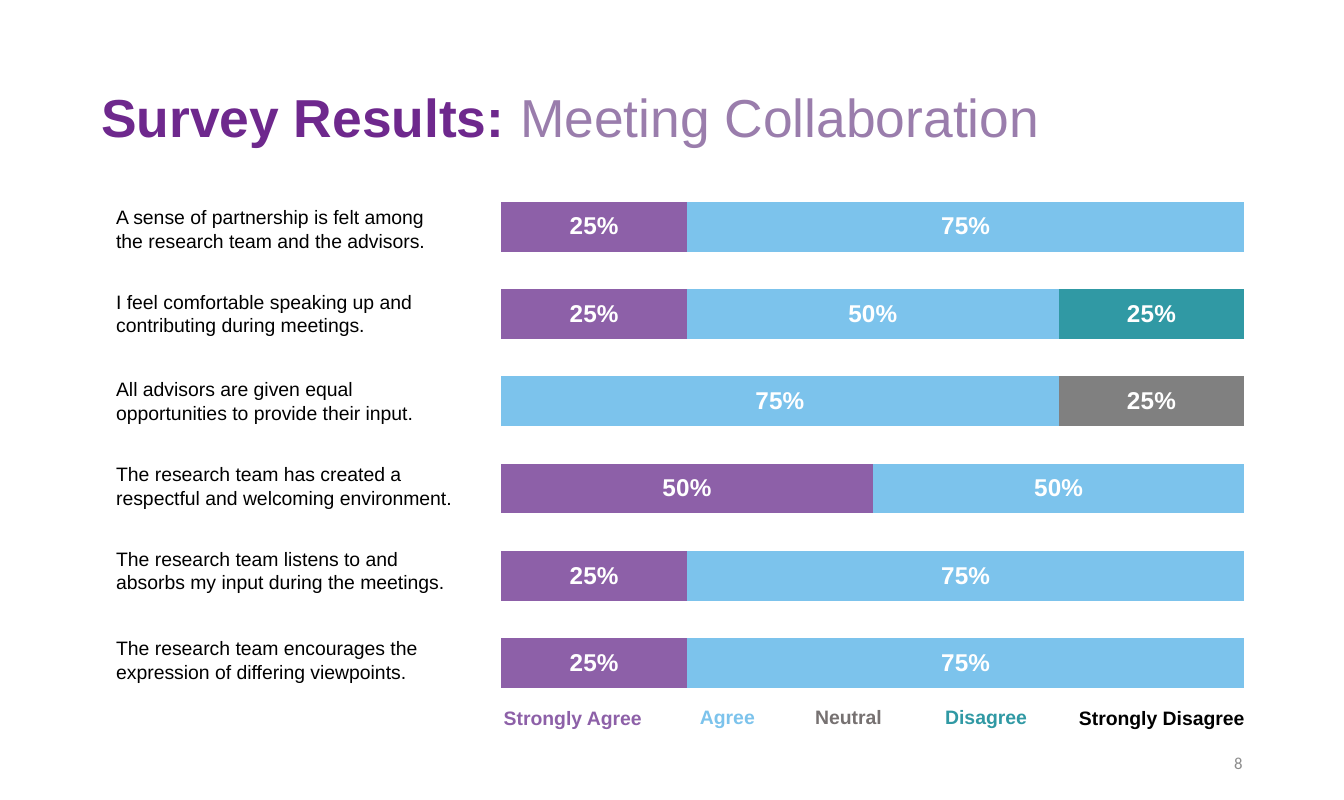
from dataclasses import dataclass

from lxml.etree import SubElement
from pptx import Presentation
from pptx.chart.data import CategoryChartData
from pptx.dml.color import RGBColor
from pptx.enum.chart import XL_CHART_TYPE as ChartType, XL_LABEL_POSITION as LabelPosition
from pptx.enum.text import MSO_ANCHOR as Anchor, MSO_AUTO_SIZE as AutoSize, PP_ALIGN as Align
from pptx.oxml.ns import qn
from pptx.util import Pt


@dataclass(frozen=True)
class Theme:
    font: str = "Arial"
    number_font: str = "Calibri"
    title_size: float = 44
    label_size: float = 20
    body_size: float = 16
    number_size: float = 13.8
    title: str = "6E288D"
    subtitle: str = "9A7DAC"
    text: str = "000000"
    page_number: str = "8C8C8C"
    on_bar: str = "FFFFFF"
    strongly_agree: str = "8D60A8"
    agree: str = "7CC3EC"
    neutral: str = "808080"
    neutral_text: str = "767171"
    disagree: str = "3099A4"
    strongly_disagree: str = "5B9BD5"


THEME = Theme()

# Statement, top in points
STATEMENTS = [
    ("A sense of partnership is felt among the research team and the advisors.", 165.6),
    ("I feel comfortable speaking up and contributing during meetings.", 235.4),
    ("All advisors are given equal opportunities to provide their input.", 307.4),
    ("The research team has created a respectful and welcoming environment.", 377.3),
    ("The research team listens to and absorbs my input during the meetings.", 447.1),
    ("The research team encourages the expression of differing viewpoints.", 520.6),
]

# Series values run from the bottom bar to the top bar
SERIES = [
    ("Series 1", (0.25, 0.25, 0.5, 0, 0.25, 0.25), THEME.strongly_agree),
    ("Series 2", (0.75, 0.75, 0.5, 0.75, 0.5, 0.75), THEME.agree),
    ("Series 3", (0, 0, 0, 0.25, 0, 0), THEME.neutral),
    ("Series 4", (0, 0, 0, 0, 0.25, 0), THEME.disagree),
    ("Series 5", (0, 0, 0, 0, 0, 0), THEME.strongly_disagree),
]

# Answer, left, top, width, colour
LEGEND = [
    ("Strongly Agree", 406.8, 578.2, 130.3, THEME.strongly_agree),
    ("Agree", 568.1, 577.4, 62.6, THEME.agree),
    ("Neutral", 661, 577.4, 76.3, THEME.neutral_text),
    ("Disagree", 767.5, 577.4, 90, THEME.disagree),
    ("Strongly Disagree", 880.6, 578.2, 153.4, THEME.text),
]


def style_font(font, size, color, bold=False, name=THEME.font):
    font.name = name
    font.size = Pt(size)
    font.bold = bold
    font.color.rgb = RGBColor.from_string(color)


def add_text(slide, box, text, size, color, bold=False, name=THEME.font,
             align=Align.LEFT, anchor=Anchor.TOP, grow=True):
    shape = slide.shapes.add_textbox(*map(Pt, box))
    frame = shape.text_frame
    frame.word_wrap = True
    frame.auto_size = AutoSize.SHAPE_TO_FIT_TEXT if grow else AutoSize.NONE
    frame.vertical_anchor = anchor
    frame.text = text
    paragraph = frame.paragraphs[0]
    paragraph.alignment = align
    style_font(paragraph.runs[0].font, size, color, bold, name)
    return paragraph


def set_plot_area(chart, **fractions):
    """Place the inner plot area by fractions of the chart frame."""
    plot_area = chart.plots[0]._element.getparent()
    layout = plot_area.find(qn("c:layout"))
    if layout is None:
        layout = SubElement(plot_area, qn("c:layout"))
        plot_area.insert(0, layout)
    manual = SubElement(layout, qn("c:manualLayout"))
    settings = {"layoutTarget": "inner", "xMode": "edge", "yMode": "edge", **fractions}
    for tag, value in settings.items():
        SubElement(manual, qn(f"c:{tag}")).set("val", str(value))


def add_results_chart(slide):
    data = CategoryChartData(number_format="0%")
    data.categories = [str(number + 1) for number in range(len(STATEMENTS))]
    for name, values, _ in SERIES:
        data.add_series(name, values)
    box = map(Pt, (400.3, 141.8, 637.9, 449.3))
    chart = slide.shapes.add_chart(ChartType.BAR_STACKED, *box, data).chart
    chart.has_legend = False
    chart.has_title = False
    style_font(chart.font, THEME.label_size, THEME.on_bar, bold=True)
    chart.category_axis.visible = False
    chart.value_axis.visible = False
    chart.value_axis.has_major_gridlines = False
    chart.value_axis.minimum_scale = 0
    chart.value_axis.maximum_scale = 1
    set_plot_area(chart, x=0.02, y=0.02, w=0.96, h=0.96)

    plot = chart.plots[0]
    plot.gap_width = 75
    plot.overlap = 100
    plot.vary_by_categories = False
    for series, (_, values, color) in zip(plot.series, SERIES):
        series.format.fill.solid()
        series.format.fill.fore_color.rgb = RGBColor.from_string(color)
        if any(values):
            labels = series.data_labels
            labels.show_value = True
            labels.position = LabelPosition.CENTER
            labels.number_format = "0%;;"  # leaves zeros blank
            labels.number_format_is_linked = False
            style_font(labels.font, THEME.label_size, THEME.on_bar, bold=True)


def main():
    presentation = Presentation()
    presentation.slide_width = Pt(1107.4)
    presentation.slide_height = Pt(658.8)
    slide = presentation.slides.add_slide(presentation.slide_layouts[6])

    # Title
    title = add_text(slide, (76.3, 35.3, 955.4, 127.4), "Survey Results: ",
                     THEME.title_size, THEME.title, bold=True, anchor=Anchor.MIDDLE, grow=False)
    title.line_spacing = 0.9
    topic = title.add_run()
    topic.text = "Meeting Collaboration"
    style_font(topic.font, THEME.title_size, THEME.subtitle)

    # Page number
    add_text(slide, (781.9, 610.6, 249.1, 35.3), "8", THEME.number_size, THEME.page_number,
             name=THEME.number_font, align=Align.RIGHT, anchor=Anchor.MIDDLE, grow=False)

    # Bars and their statements
    add_results_chart(slide)
    for statement, top in STATEMENTS:
        add_text(slide, (88.6, top, 293, 46.1), statement, THEME.body_size, THEME.text)

    # Legend
    for answer, left, top, width, color in LEGEND:
        add_text(slide, (left, top, width, 26.6), answer, THEME.body_size, color,
                 bold=True, align=Align.CENTER)

    presentation.save("out.pptx")


if __name__ == "__main__":
    main()
